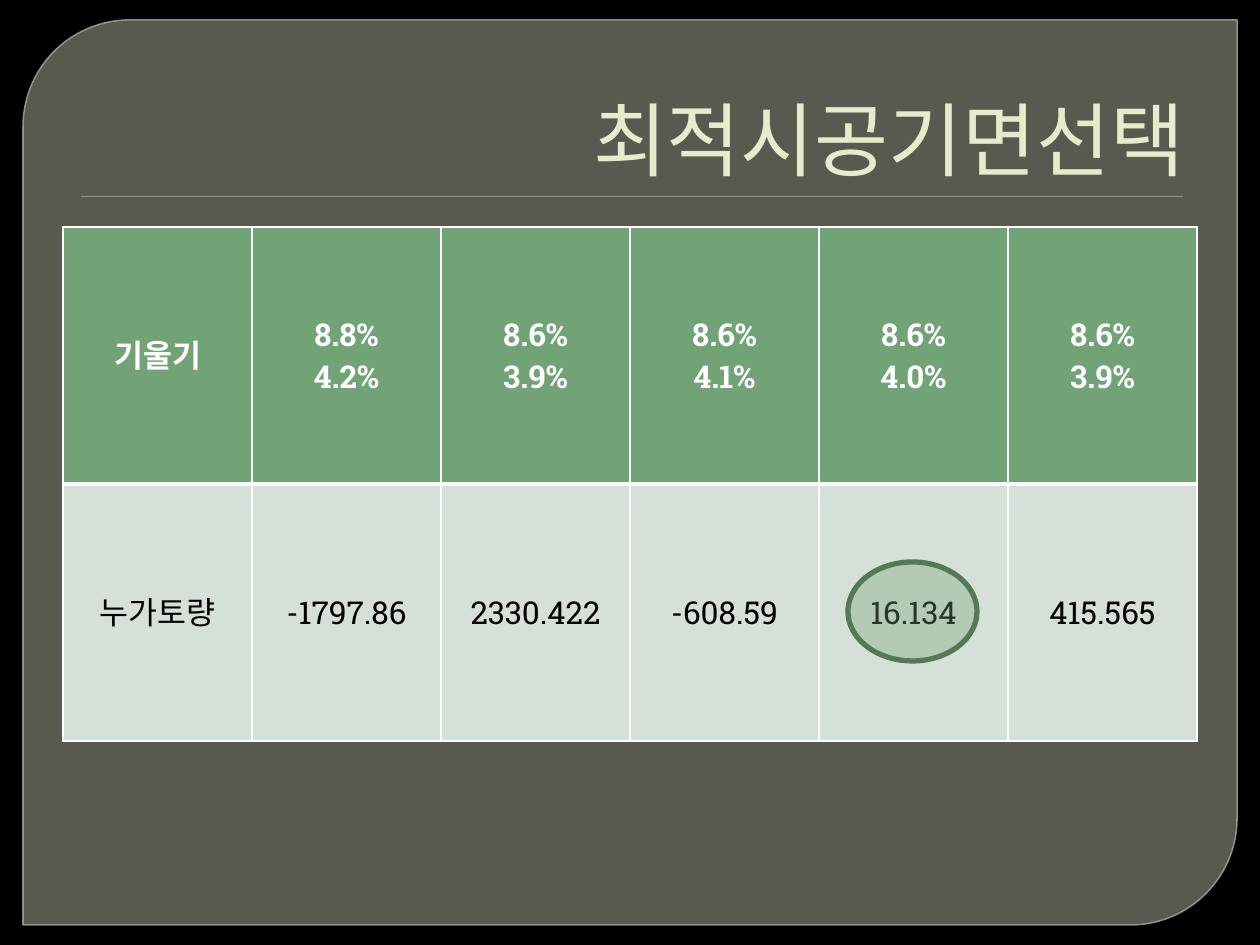
from dataclasses import dataclass
from typing import Optional

from lxml.etree import SubElement
from pptx import Presentation
from pptx.dml.color import RGBColor
from pptx.enum.shapes import MSO_SHAPE
from pptx.enum.text import MSO_ANCHOR, MSO_AUTO_SIZE, PP_ALIGN
from pptx.oxml import parse_xml
from pptx.oxml.ns import nsdecls, qn
from pptx.util import Emu, Pt

FONT = "Roboto Slab"
GREEN, PALE, WHITE, BLACK = "72A376", "D5E0D6", "FFFFFF", "000000"


def px(n: int) -> Emu:
    return Emu(round(n * 914400 / 126))


def rgb(color: str) -> RGBColor:
    return RGBColor.from_string(color)


@dataclass
class Shape:
    kind: MSO_SHAPE
    box: tuple[int, int, int, int]
    fill: str
    alpha: int = 100
    line: Optional[str] = None
    width: float = 1
    line_alpha: int = 100


@dataclass
class RowStyle:
    fill: str
    color: str
    bold: bool
    top: int
    bottom: int


def set_alpha(fill, alpha: int) -> None:
    if alpha < 100:
        clr = fill._xPr.find(qn("a:solidFill"))[0]
        SubElement(clr, qn("a:alpha")).set("val", str(alpha * 1000))


def add_shape(s, spec_: Shape):
    sp = s.shapes.add_shape(spec_.kind, *map(px, spec_.box))
    sp.shadow.inherit = False
    sp.fill.solid()
    sp.fill.fore_color.rgb = rgb(spec_.fill)
    set_alpha(sp.fill, spec_.alpha)
    if spec_.line:
        sp.line.color.rgb = rgb(spec_.line)
        sp.line.width = Pt(spec_.width)
        set_alpha(sp.line.fill, spec_.line_alpha)
    else:
        sp.line.fill.background()
    return sp


def add_run(p, text: str, size: int, color: str, bold: bool = False) -> None:
    r = p.add_run()
    r.text = text
    r.font.size = Pt(size)
    r.font.bold = bold
    r.font.color.rgb = rgb(color)
    r.font.name = FONT
    SubElement(r.font._element, qn("a:ea")).set("typeface", FONT)


def set_borders(cell, style: RowStyle) -> None:
    sides = {"L": 1, "R": 1, "T": style.top, "B": style.bottom}
    for i, (side, width) in enumerate(sides.items()):
        cell._tc.get_or_add_tcPr().insert(i, parse_xml(
            f'<a:ln{side} {nsdecls("a")} w="{Pt(width)}"><a:solidFill>'
            f'<a:srgbClr val="{WHITE}"/></a:solidFill></a:ln{side}>'))


def fill_cell(cell, lines: list[str], style: RowStyle) -> None:
    cell.vertical_anchor = MSO_ANCHOR.MIDDLE
    cell.fill.solid()
    cell.fill.fore_color.rgb = rgb(style.fill)
    set_borders(cell, style)
    tf = cell.text_frame
    for i, line in enumerate(lines):
        p = tf.add_paragraph() if i else tf.paragraphs[0]
        p.alignment = PP_ALIGN.CENTER
        add_run(p, line, 18, style.color, style.bold)


PANEL = Shape(MSO_SHAPE.ROUND_2_DIAG_RECTANGLE, (23, 20, 1214, 905),
              "888B7B", 65, "9DA090", 0.87, 88)
RULE = Shape(MSO_SHAPE.RECTANGLE, (81, 196, 1102, 1), GREEN)
MARK = Shape(MSO_SHAPE.OVAL, (848, 562, 129, 99), GREEN, 34, "547957", 3)

HEADER = RowStyle(GREEN, WHITE, True, 1, 3)
BODY = RowStyle(PALE, BLACK, False, 3, 1)
SLOPES = [["기울기"], ["8.8%", "4.2%"], ["8.6%", "3.9%"],
          ["8.6%", "4.1%"], ["8.6%", "4.0%"], ["8.6%", "3.9%"]]
VOLUMES = [["누가토량"], ["-1797.86"], ["2330.422"],
           ["-608.59"], ["16.134"], ["415.565"]]


def main() -> None:
    prs = Presentation()
    prs.slide_width, prs.slide_height = px(1260), px(945)
    s = prs.slides.add_slide(prs.slide_layouts[5])
    s.background.fill.solid()
    s.background.fill.fore_color.rgb = rgb(BLACK)

    # Backdrop panel and title rule
    panel = add_shape(s, PANEL)
    panel.adjustments[0], panel.adjustments[1] = 0.118, 0
    rule = add_shape(s, RULE)
    rule._element.spPr.find(qn("a:effectLst")).append(parse_xml(
        f'<a:outerShdw {nsdecls("a")} blurRad="12700" dist="12700" dir="5400000">'
        f'<a:srgbClr val="{BLACK}"><a:alpha val="75000"/></a:srgbClr></a:outerShdw>'))

    # Title, raised above the panel
    title = s.shapes.title
    s.shapes._spTree.append(title._element)
    title.left, title.top, title.width, title.height = map(px, (63, 35, 1134, 158))
    tf = title.text_frame
    tf.auto_size = MSO_AUTO_SIZE.NONE
    tf.vertical_anchor = MSO_ANCHOR.BOTTOM
    p = tf.paragraphs[0]
    p.alignment = PP_ALIGN.RIGHT
    add_run(p, "최적시공기면선택", 46, "E7EACB")

    # Table of slopes and cumulative volumes
    rows = [(SLOPES, HEADER), (VOLUMES, BODY)]
    table = s.shapes.add_table(len(rows), len(SLOPES),
                               *map(px, (63, 227, 1134, 514))).table
    for r, (cells, style) in enumerate(rows):
        for c, lines in enumerate(cells):
            fill_cell(table.cell(r, c), lines, style)

    # Ring around the chosen volume
    add_shape(s, MARK)
    prs.save("out.pptx")


if __name__ == "__main__":
    main()
